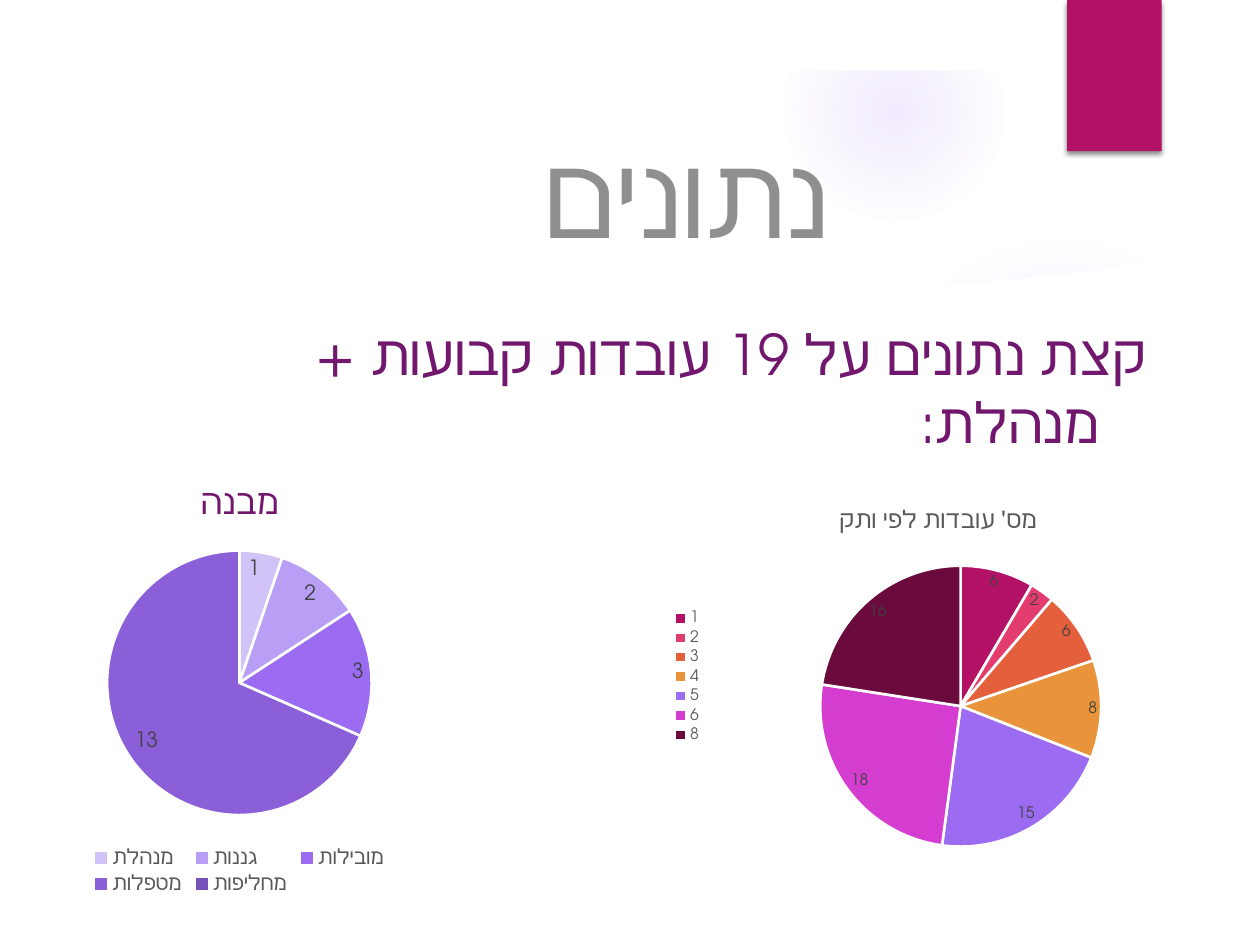
from lxml import etree
from pptx import Presentation
from pptx import util as u
from pptx.chart.data import CategoryChartData
from pptx.dml.color import RGBColor
from pptx.enum import chart as ch, shapes, text
from pptx.oxml import parse_xml
from pptx.oxml.ns import qn

FACE = "TeX Gyre Adventor"
NS = 'xmlns:a="http://schemas.openxmlformats.org/drawingml/2006/main"'


def rgb(code):
    return RGBColor.from_string(code)


def style(font, size, color):
    font.name, font.size = FACE, u.Pt(size)
    font.color.rgb = rgb(color)


def inches(points):
    return [(u.Inches(x), u.Inches(y)) for x, y in points]


class Deck:
    def __init__(self, width, height):
        self.prs = Presentation()
        self.prs.slide_width = u.Inches(width)
        self.prs.slide_height = u.Inches(height)
        self.slide = self.prs.slides.add_slide(self.prs.slide_layouts[5])
        self.shapes = self.slide.shapes

    def plain(self, shape, color):
        shape.shadow.inherit = False
        shape.line.fill.background()
        shape.fill.solid()
        shape.fill.fore_color.rgb = rgb(color)
        return shape

    def preset(self, kind, box, color):
        return self.plain(self.shapes.add_shape(kind, *map(u.Inches, box)), color)

    def glow(self, left, top, size, color, stops):
        """Draw a round gradient; stops are (place, opacity) in percent."""
        disc = self.preset(shapes.MSO_SHAPE.OVAL, (left, top, size, size), color)
        marks = "".join(
            f'<a:gs pos="{place * 1000}"><a:srgbClr val="{color}">'
            f'<a:alpha val="{alpha * 1000}"/></a:srgbClr></a:gs>'
            for place, alpha in stops)
        grad = parse_xml(
            f'<a:gradFill {NS}><a:gsLst>{marks}</a:gsLst><a:path path="circle">'
            '<a:fillToRect l="50000" t="50000" r="50000" b="50000"/>'
            '</a:path></a:gradFill>')
        props = disc.element.spPr
        props.replace(props.find(qn("a:solidFill")), grad)

    def outline(self, *rings, color="FFFFFF", alpha=100):
        first, *rest = [inches(ring) for ring in rings]
        build = self.shapes.build_freeform(*first[0], scale=1.0)
        build.add_line_segments(first[1:], close=True)
        for ring in rest:
            build.move_to(*ring[0])
            build.add_line_segments(ring[1:], close=True)
        shape = self.plain(build.convert_to_shape(), color)
        if alpha < 100:
            tint = shape.element.spPr.find(qn("a:solidFill"))[0]
            etree.SubElement(tint, qn("a:alpha")).set("val", str(alpha * 1000))

    def tab(self, box, color):
        """Draw the coloured tab with its soft shadow below."""
        shape = self.preset(shapes.MSO_SHAPE.RECTANGLE, box, color)
        shape.element.spPr.find(qn("a:effectLst")).append(parse_xml(
            f'<a:outerShdw {NS} blurRad="38100" dist="25400" dir="5400000" '
            'rotWithShape="0"><a:srgbClr val="000000"><a:alpha val="45000"/>'
            '</a:srgbClr></a:outerShdw>'))

    def words(self, shape, line, size, color, align):
        frame = shape.text_frame
        frame.word_wrap = True
        frame.auto_size = text.MSO_AUTO_SIZE.SHAPE_TO_FIT_TEXT
        para = frame.paragraphs[0]
        para.alignment = align
        run = para.add_run()
        run.text = line
        style(run.font, size, color)
        etree.SubElement(run.font._element, qn("a:cs")).set("typeface", FACE)
        return para

    def title(self, box, line, size, color):
        shape = self.shapes.title
        shape.left, shape.top, shape.width, shape.height = map(u.Inches, box)
        shape.element.getparent().append(shape.element)
        self.words(shape, line, size, color, text.PP_ALIGN.LEFT)
        shape.text_frame.vertical_anchor = text.MSO_ANCHOR.MIDDLE

    def note(self, box, line, size, color):
        """Add right-to-left text with a hanging indent."""
        shape = self.shapes.add_textbox(*map(u.Inches, box))
        para = self.words(shape, line, size, color, text.PP_ALIGN.RIGHT)
        props = para._p.get_or_add_pPr()
        hang = u.Inches(0.38)
        for key, val in (("marL", hang), ("indent", -hang), ("rtl", 1)):
            props.set(key, str(int(val)))

    def pie(self, box, name, head, rows, spot, side, size, plot_box):
        """Add a pie; rows are (category, value, colour)."""
        data = CategoryChartData()
        data.categories = [row[0] for row in rows]
        data.add_series(name, [row[1] for row in rows])
        chart = self.shapes.add_chart(
            ch.XL_CHART_TYPE.PIE, *map(u.Inches, box), data).chart
        style(chart.font, 10, "000000")
        chart.has_title = True
        run = chart.chart_title.text_frame.paragraphs[0].add_run()
        run.text = head[0]
        style(run.font, *head[1:])
        run.font.bold = False
        chart.has_legend = True
        chart.legend.position = side
        chart.legend.include_in_layout = False
        style(chart.legend.font, size, "595959")
        plot = chart.plots[0]
        plot.vary_by_categories = True
        series = plot.series[0]
        for num, row in enumerate(rows):
            form = series.points[num].format
            form.fill.solid()
            form.fill.fore_color.rgb = rgb(row[2])
            form.line.color.rgb = rgb("FFFFFF")
            form.line.width = u.Pt(1.5)
        labels = series.data_labels
        labels.show_value = True
        labels.position = spot
        style(labels.font, size, "404040")
        self.place(chart, box, plot_box)

    def place(self, chart, box, plot_box):
        """Fix the plot area inside the chart, given in slide inches."""
        left, top, width, height = box
        x, y, size = plot_box
        area = chart._chartSpace.chart.plotArea
        for old in area.findall(qn("c:layout")):
            area.remove(old)
        layout = etree.Element(qn("c:layout"))
        area.insert(0, layout)
        manual = etree.SubElement(layout, qn("c:manualLayout"))
        parts = (("layoutTarget", "inner"), ("xMode", "edge"), ("yMode", "edge"),
                 ("x", (x - left) / width), ("y", (y - top) / height),
                 ("w", size / width), ("h", size / height))
        for tag, val in parts:
            etree.SubElement(manual, qn("c:" + tag)).set("val", str(val))


def main():
    deck = Deck(10, 7.5)
    violet, plum, pink = "9B6BF2", "71186E", "B31166"
    deck.glow(6.89, 1.83, 3.08, violet, [(0, 7), (36, 6), (69, 0)])
    deck.glow(6.22, 0, 1.75, violet, [(0, 14), (36, 7), (73, 0)])
    deck.outline([(6.99, 2.34), (7.6, 2.33), (8.6, 2.22), (9.56, 2.08),
                  (9.51, 1.74), (9.01, 1.9), (8.5, 2.03), (8.01, 2.13),
                  (7.47, 2.23), (6.96, 2.29)], alpha=20)
    deck.outline([(0.53, 2.03), (0.53, 6.99), (9.47, 6.99), (9.47, 2.03),
                  (8.66, 2.15), (7.85, 2.24), (7.04, 2.29), (6.25, 2.33),
                  (5.48, 2.34), (4.39, 2.34), (3.38, 2.3), (2.49, 2.24),
                  (1.73, 2.17), (0.99, 2.09)])
    deck.outline([(0, 0), (0, 7.5), (10, 7.5), (10, 0)],
                 [(9.45, 6.95), (0.56, 6.95), (0.56, 0.56), (9.45, 0.56)])
    deck.tab((8.47, 0, 0.75, 1.2), pink)
    deck.title((4.21, 0.92, 5, 1.21), "נתונים", 66, "8F8F8F")
    deck.note((1.14, 2.49, 8.06, 0.64),
              "קצת נתונים על 19 עובדות קבועות + מנהלת:", 32, plum)

    staff = [("מנהלת", 1, "D1C2F8"), ("גננות", 2, "B89EF5"),
             ("מובילות", 3, violet), ("מטפלות", 13, "8A5FD7"),
             ("מחליפות", None, "7651B8")]
    deck.pie((0.14, 3.65, 3.52, 3.49), "מבנה", ("מבנה", 20, plum), staff,
             ch.XL_LABEL_POSITION.INSIDE_END, ch.XL_LEGEND_POSITION.BOTTOM,
             12, (0.85, 4.37, 2.1))
    years = [("1", 6, pink), ("2", 2, "E33D6F"), ("3", 6, "E45F3C"),
             ("4", 8, "E9943A"), ("5", 15, violet), ("6", 18, "D53DD0"),
             ("8", 16, "6B0A3D")]
    deck.pie((5.24, 3.87, 4.41, 3), "Series 1",
             ("מס' עובדות לפי ותק", 14, "595959"), years,
             ch.XL_LABEL_POSITION.BEST_FIT, ch.XL_LEGEND_POSITION.LEFT,
             9, (6.51, 4.49, 2.23))
    deck.prs.save("out.pptx")


if __name__ == "__main__":
    main()
